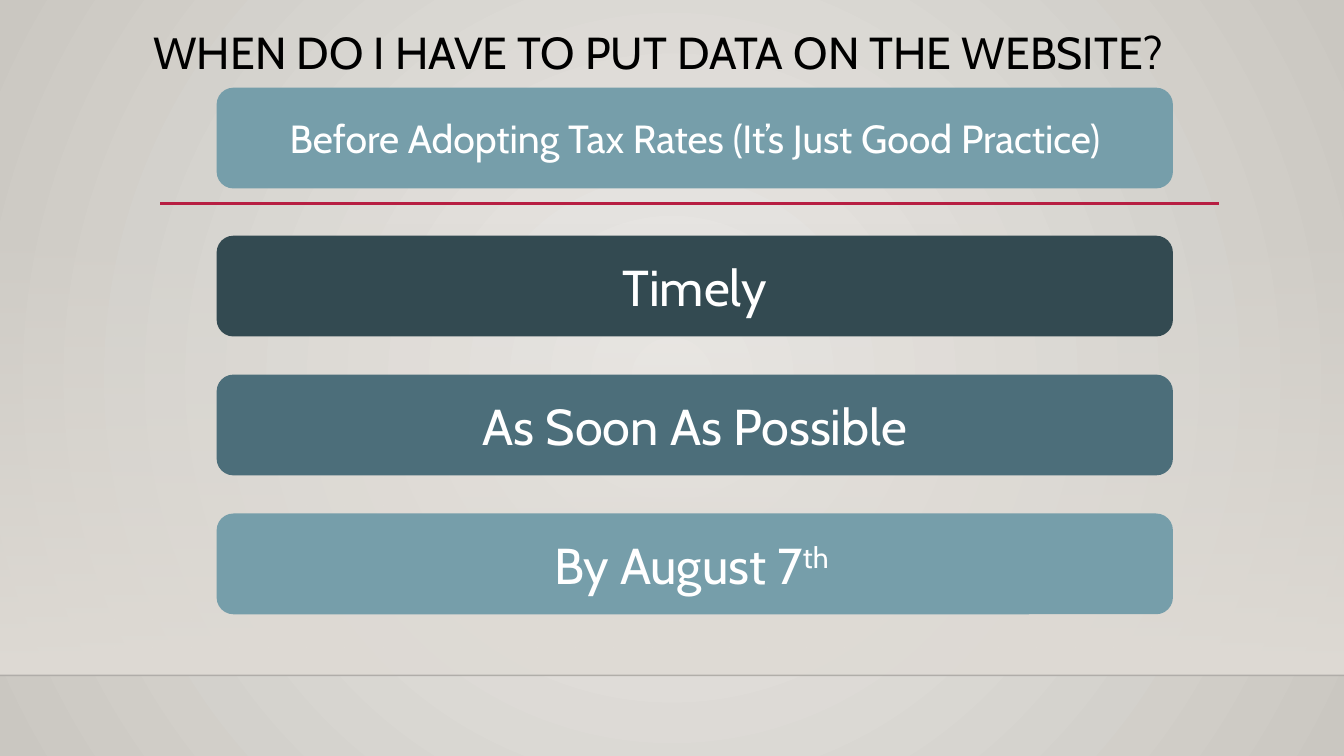
"""Build the slide on when data must be put on the website."""
import pptx
import pptx.util
import pptx.dml.color
import pptx.enum.shapes
import pptx.enum.text
import pptx.oxml
import pptx.oxml.ns

Cm = pptx.util.Cm
Pt = pptx.util.Pt
RGBColor = pptx.dml.color.RGBColor
SHAPE = pptx.enum.shapes.MSO_SHAPE
ALIGN = pptx.enum.text.PP_ALIGN
ANCHOR = pptx.enum.text.MSO_ANCHOR
qn = pptx.oxml.ns.qn
NS = pptx.oxml.ns.nsdecls("a")

FONT = "Cabin"
BLACK = RGBColor(0x00, 0x00, 0x00)
WHITE = RGBColor(0xFF, 0xFF, 0xFF)
PALE = RGBColor(0xEC, 0xEA, 0xE7)
STONE = RGBColor(0xCA, 0xC7, 0xC1)
SAND = RGBColor(0xDF, 0xDB, 0xD5)
INK = RGBColor(0x00, 0x00, 0x01)
RED = RGBColor(0xB7, 0x1E, 0x42)
DARK = RGBColor(0x33, 0x4A, 0x51)
SLATE = RGBColor(0x4C, 0x6E, 0x7A)
SKY = RGBColor(0x76, 0x9E, 0xAA)

WIDE, HIGH = Cm(33.87), Cm(19.05)
FLOOR = Cm(17.02)
RADIAL = (f'<a:path {NS} path="circle"><a:fillToRect l="50000" t="50000" '
          'r="50000" b="50000"/></a:path>')
DOWN = f'<a:lin {NS} ang="5400000" scaled="0"/>'


def fade(node, share):
    """Set the opacity, in percent, of the first colour in an element."""
    color = next(node.iter(qn("a:srgbClr")))
    color.append(pptx.oxml.parse_xml(f'<a:alpha {NS} val="{share * 1000}"/>'))


def blend(fill, node, colors, course):
    """Give a fill two gradient stops that run along the given course."""
    fill.gradient()
    for stop, color in zip(fill.gradient_stops, colors):
        stop.color.rgb = color
    grad = next(node.iter(qn("a:gradFill")))
    grad.replace(grad.find(qn("a:lin")), pptx.oxml.parse_xml(course))


def add_run(para, text, size, color, base=0):
    """Add one run of text, raised by base percent."""
    run = para.add_run()
    run.text = text
    run.font.name = FONT
    run.font.size = Pt(size)
    run.font.color.rgb = color
    if base:
        run.font._element.set("baseline", str(base * 1000))


def add_panel(slide):
    """Add the panel that fades in towards the floor line."""
    top = Cm(5.61)
    panel = slide.shapes.add_shape(SHAPE.RECTANGLE, 0, top, WIDE, FLOOR - top)
    panel.shadow.inherit = False
    panel.line.fill.background()
    blend(panel.fill, panel._element, (SAND, SAND), DOWN)
    fade(panel._element, 0)


def add_rule(slide, left, right, top, color, weight):
    """Add a level line and return it."""
    kind = pptx.enum.shapes.MSO_CONNECTOR.STRAIGHT
    rule = slide.shapes.add_connector(kind, left, top, right, top)
    rule.line.color.rgb = color
    rule.line.width = Pt(weight)
    rule._element.spPr.append(pptx.oxml.parse_xml(f"<a:effectLst {NS}/>"))
    return rule


def set_title(slide, text):
    """Place the title and write its text."""
    title = slide.shapes.title
    title.left, title.top = Cm(3.61), Cm(0.66)
    title.width, title.height = Cm(26.67), Cm(2.92)
    frame = title.text_frame
    frame.vertical_anchor = ANCHOR.TOP
    frame.word_wrap = True
    para = frame.paragraphs[0]
    para.alignment = ALIGN.LEFT
    para.line_spacing = 0.9
    add_run(para, text, 32, BLACK)


def add_bar(slide, top, color, size, *runs):
    """Add a rounded bar with centred runs of (text, base)."""
    bar = slide.shapes.add_shape(
        SHAPE.ROUNDED_RECTANGLE, Cm(5.46), top, Cm(24.1), Cm(2.54))
    bar.shadow.inherit = False
    bar.fill.solid()
    bar.fill.fore_color.rgb = color
    bar.line.fill.background()
    frame = bar.text_frame
    frame.word_wrap = True
    frame.vertical_anchor = ANCHOR.MIDDLE
    para = frame.paragraphs[0]
    para.alignment = ALIGN.CENTER
    for text, base in runs:
        add_run(para, text, size, WHITE, base)


def main():
    """Build and save the slide."""
    deck = pptx.Presentation()
    deck.slide_width, deck.slide_height = WIDE, HIGH
    slide = deck.slides.add_slide(deck.slide_layouts[5])
    blend(slide.background.fill, slide._element, (PALE, STONE), RADIAL)
    add_panel(slide)
    floor = add_rule(slide, 0, WIDE, FLOOR, INK, 1)
    fade(floor._element, 20)
    add_rule(slide, Cm(4.04), Cm(30.73), Cm(5.13), RED, 2.5)
    set_title(slide, "WHEN DO I HAVE TO PUT DATA ON THE WEBSITE?")
    bars = [
        (DARK, [("Timely", 0)]),
        (SLATE, [("As Soon As Possible", 0)]),
        (SKY, [("By August 7", 0), ("th ", 30)]),
    ]
    for row, (color, runs) in enumerate(bars):
        add_bar(slide, Cm(5.94 + 3.5 * row), color, 36, *runs)
    add_bar(slide, Cm(2.21), SKY, 28,
            ("Before Adopting Tax Rates (It’s Just Good Practice)", 0))
    deck.save("out.pptx")


if __name__ == "__main__":
    main()
